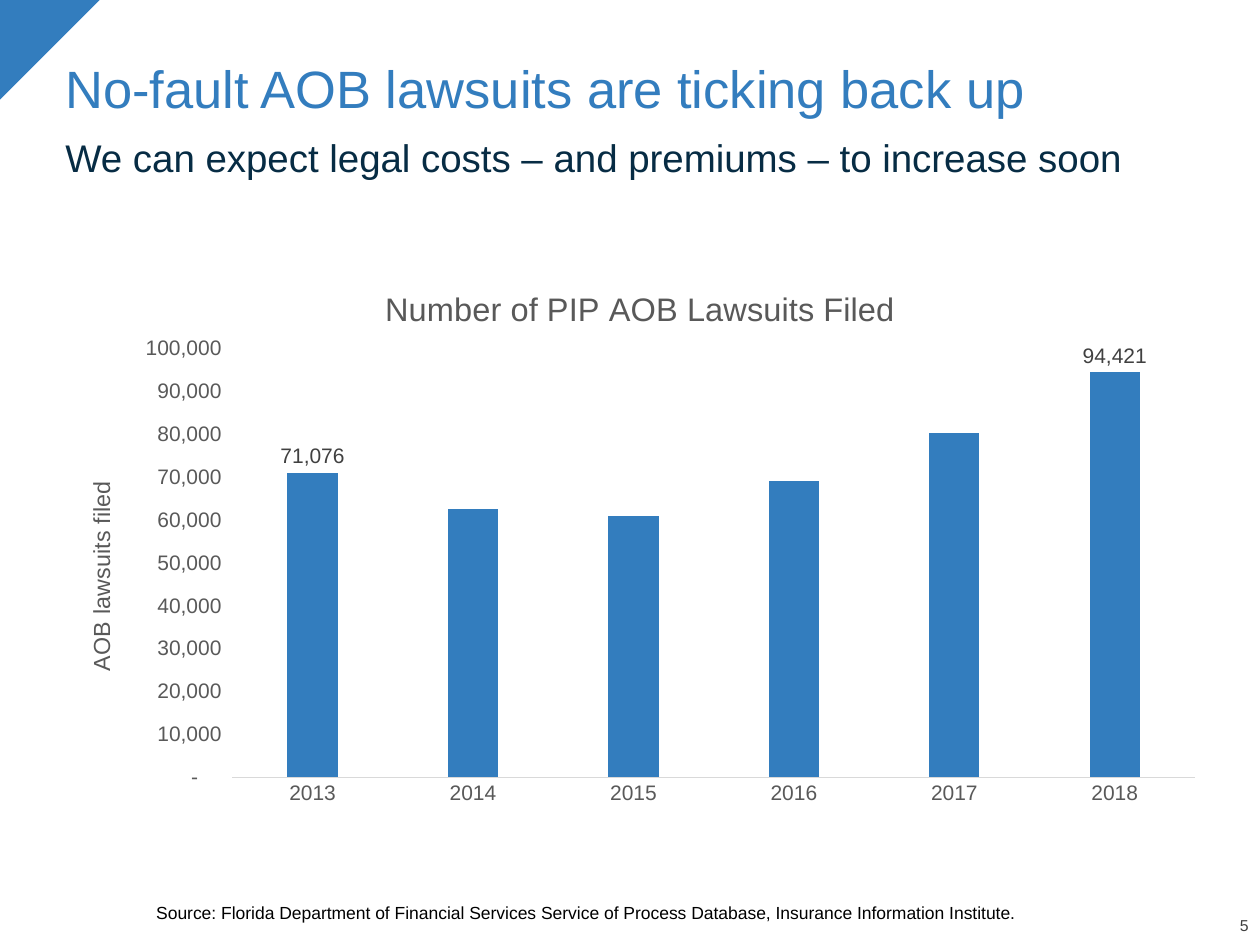
from dataclasses import dataclass

from lxml.etree import SubElement
from pptx import Presentation
from pptx.chart.data import CategoryChartData
from pptx.dml.color import RGBColor
from pptx.enum.chart import XL_CHART_TYPE as ChartType, XL_LABEL_POSITION as LabelPos
from pptx.enum.chart import XL_TICK_MARK as Tick
from pptx.enum.shapes import MSO_SHAPE as Shape
from pptx.enum.text import MSO_ANCHOR as Anchor, PP_ALIGN as Align
from pptx.oxml import parse_xml
from pptx.oxml.ns import nsdecls, qn
from pptx.util import Inches, Pt

FONT = "Arial"
BLUE, NAVY, BLACK = "337DBE", "072C44", "000000"
GREY, DARK_GREY, PALE_GREY = "595959", "404040", "D9D9D9"
LEFT, WIDTH = 0.42, 9.25  # main column, inches

FILINGS = {"2013": 71076, "2014": 62612, "2015": 60843,
           "2016": 69008, "2017": 80248, "2018": 94421}
LABELLED_YEARS = ("2013", "2018")


@dataclass
class TextBlock:
    text: str
    box: tuple[float, float, float, float]
    size: float
    color: str
    inset: tuple[float, float] = (0, 0)
    anchor: Anchor = Anchor.BOTTOM
    align: Align = Align.LEFT


HEADING_INSET = (0.1, 0.05)
TEXTS = [
    TextBlock("No-fault AOB lawsuits are ticking back up",
              (LEFT, 0.45, WIDTH, 1.04), 30, BLUE, HEADING_INSET, Anchor.TOP),
    TextBlock("We can expect legal costs – and premiums – to increase soon",
              (LEFT, 1.06, WIDTH, 0.43), 22, NAVY, HEADING_INSET, Anchor.TOP),
    TextBlock("Source: Florida Department of Financial Services Service of Process "
              "Database, Insurance Information Institute.",
              (1.24, 6.88, 8.4, 0.45), 10, BLACK),
    TextBlock("5", (9.43, 7.29, 0.48, 0.13), 9, DARK_GREY, align=Align.RIGHT),
]


def rgb(color: str) -> RGBColor:
    return RGBColor.from_string(color)


def style_font(font, size: float, color: str) -> None:
    font.name, font.size, font.bold = FONT, Pt(size), False
    font.color.rgb = rgb(color)


def add_text(slide, block: TextBlock) -> None:
    frame = slide.shapes.add_textbox(*map(Inches, block.box)).text_frame
    frame.word_wrap = True
    frame.vertical_anchor = block.anchor
    across, down = map(Inches, block.inset)
    frame.margin_left = frame.margin_right = across
    frame.margin_top = frame.margin_bottom = down
    frame.text = block.text
    paragraph = frame.paragraphs[0]
    paragraph.alignment, paragraph.line_spacing = block.align, 0.9
    style_font(paragraph.runs[0].font, block.size, block.color)


def place(element, **shares: float) -> None:
    """Fix a chart part at shares of the chart's size."""
    for old in element.findall(qn("c:layout")):
        element.remove(old)
    layout = parse_xml(f"<c:layout {nsdecls('c')}/>")
    manual = SubElement(layout, qn("c:manualLayout"))
    if "w" in shares:
        SubElement(manual, qn("c:layoutTarget"), val="inner")
    for side in "xy":
        SubElement(manual, qn(f"c:{side}Mode"), val="edge")
    for side, share in shares.items():
        SubElement(manual, qn(f"c:{side}"), val=str(share))
    text = element.find(qn("c:tx"))
    element.insert(0 if text is None else element.index(text) + 1, layout)


def set_title(title, text: str, size: float, x: float, y: float) -> None:
    title.text_frame.text = text
    style_font(title.text_frame.paragraphs[0].runs[0].font, size, GREY)
    place(title._element, x=x, y=y)


def add_filings_chart(slide) -> None:
    data = CategoryChartData(number_format="#,##0")
    data.categories = list(FILINGS)
    data.add_series("Series 1", list(FILINGS.values()))
    box = map(Inches, (LEFT, 2.06, WIDTH, 4.42))
    chart = slide.shapes.add_chart(ChartType.COLUMN_CLUSTERED, *box, data).chart
    style_font(chart.font, 10, BLACK)
    chart.has_legend = False
    chart.has_title = True
    set_title(chart.chart_title, "Number of PIP AOB Lawsuits Filed", 18.6, 0.28, 0.04)
    place(chart._chartSpace.chart.plotArea, x=0.154, y=0.16, w=0.826, h=0.77)

    # Axes
    years, counts = chart.category_axis, chart.value_axis
    for axis in (years, counts):
        axis.major_tick_mark = axis.minor_tick_mark = Tick.NONE
        axis.has_major_gridlines = False
        style_font(axis.tick_labels.font, 12, GREY)
    years.format.line.color.rgb = rgb(PALE_GREY)
    years.format.line.width = Pt(0.75)
    counts.format.line.fill.background()
    counts.minimum_scale, counts.maximum_scale, counts.major_unit = 0, 100000, 10000
    counts.tick_labels.number_format = r'_(* #,##0_);_(* \(#,##0\);_(* "-"??_);_(@_)'
    counts.tick_labels.number_format_is_linked = False
    set_title(counts.axis_title, "AOB lawsuits filed", 13.3, 0.025, 0.39)

    # Columns, with values on the first and last year only
    plot = chart.plots[0]
    plot.gap_width, plot.overlap, plot.vary_by_categories = 219, -27, False
    columns = plot.series[0]
    columns.format.fill.solid()
    columns.format.fill.fore_color.rgb = rgb(BLUE)
    columns.data_labels.show_value = False
    for index, year in enumerate(FILINGS):
        if year in LABELLED_YEARS:
            label = columns.points[index].data_label
            style_font(label.font, 12, DARK_GREY)
            label.position = LabelPos.OUTSIDE_END


def add_corner(slide) -> None:
    corner = slide.shapes.add_shape(
        Shape.RIGHT_TRIANGLE, *map(Inches, (-0.01, 0, 0.8, 0.8)))
    corner.rotation = 90
    corner.shadow.inherit = False
    corner.fill.solid()
    corner.fill.fore_color.rgb = rgb(BLUE)
    corner.line.fill.background()


def main() -> None:
    deck = Presentation()
    deck.slide_width, deck.slide_height = Inches(10), Inches(7.5)
    slide = deck.slides.add_slide(deck.slide_layouts[6])
    add_corner(slide)
    add_filings_chart(slide)
    for block in TEXTS:
        add_text(slide, block)
    deck.save("out.pptx")


if __name__ == "__main__":
    main()
